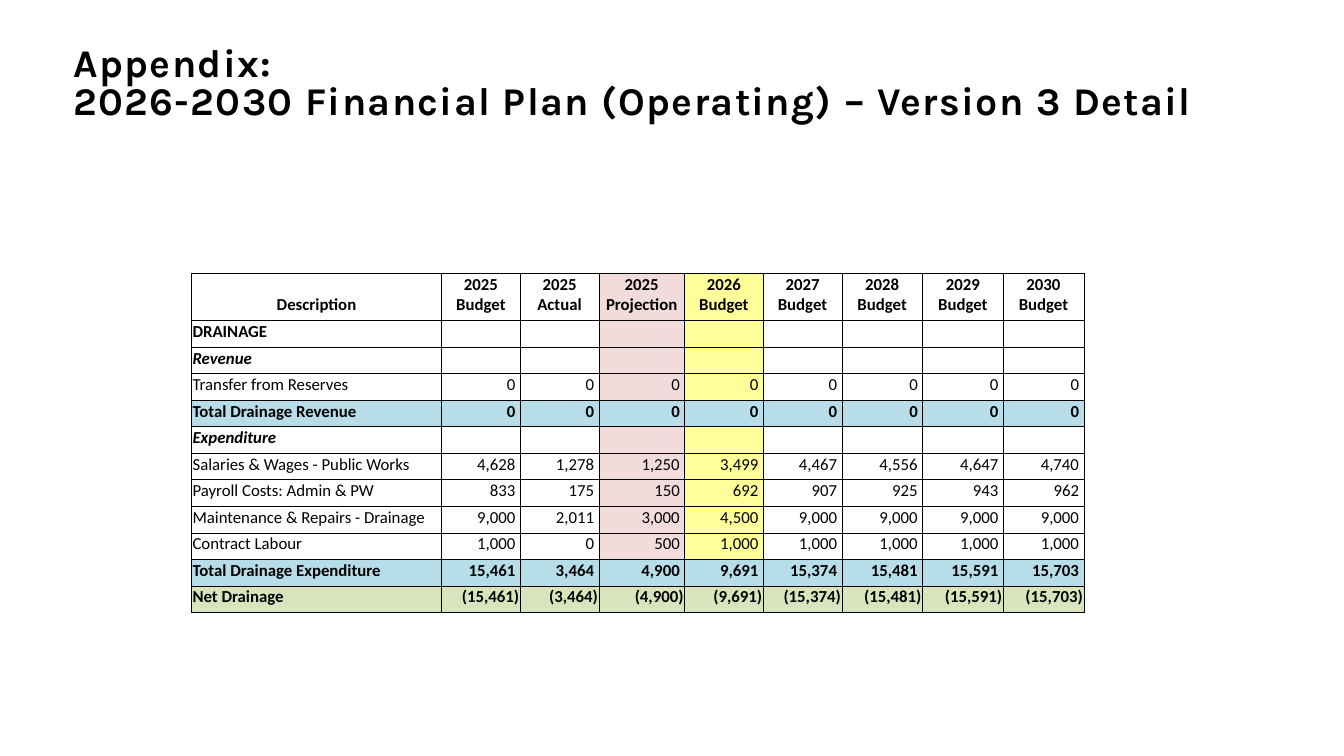
"""Build the drainage operating plan slide: a two-line title above a budget table."""
import lxml.etree
import pptx
import pptx.dml.color
import pptx.enum.text
import pptx.oxml.ns
import pptx.util

TITLE_LINES = ["Appendix:", "2026-2030 Financial Plan (Operating) – Version 3 Detail"]
HEADERS = ["Description", "2025 Budget", "2025 Actual", "2025 Projection", "2026 Budget",
           "2027 Budget", "2028 Budget", "2029 Budget", "2030 Budget"]
ROWS = [
    ("section", "DRAINAGE", []),
    ("group", "Revenue", []),
    ("item", "Transfer from Reserves", [0] * 8),
    ("total", "Total Drainage Revenue", [0] * 8),
    ("group", "Expenditure", []),
    ("item", "Salaries & Wages - Public Works", [4628, 1278, 1250, 3499, 4467, 4556, 4647, 4740]),
    ("item", "Payroll Costs: Admin & PW", [833, 175, 150, 692, 907, 925, 943, 962]),
    ("item", "Maintenance & Repairs - Drainage", [9000, 2011, 3000, 4500, 9000, 9000, 9000, 9000]),
    ("item", "Contract Labour", [1000, 0, 500, 1000, 1000, 1000, 1000, 1000]),
    ("total", "Total Drainage Expenditure",
     [15461, 3464, 4900, 9691, 15374, 15481, 15591, 15703]),
    ("net", "Net Drainage", [-15461, -3464, -4900, -9691, -15374, -15481, -15591, -15703]),
]
COLORS = {"text": "000000", "projection": "F2DCDB", "current": "FFFF99",
          "total": "B7DEE8", "net": "D8E4BC"}
COLUMN_FILLS = {3: "projection", 4: "current"}
COLUMN_WIDTHS = [2.48, 0.78, 0.78, 0.85, 0.78, 0.78, 0.8, 0.8, 0.8]
HEADER_HEIGHT, ROW_HEIGHT = 0.47, 0.26
TABLE_LEFT, TABLE_TOP = 1.9, 2.71
TITLE_BOX = (0.73, -0.12, 11.57, 1.34)
THIN, THICK = 0.5, 1
ALIGN = pptx.enum.text.PP_ALIGN
INCHES = pptx.util.Inches


def color(name):
    return pptx.dml.color.RGBColor.from_string(COLORS[name])


def add_run(paragraph, text, font_name, size, bold, italic=False):
    run = paragraph.add_run()
    run.text = text
    run.font.name = font_name
    run.font.size = pptx.util.Pt(size)
    run.font.bold = bold
    run.font.italic = italic
    run.font.color.rgb = color("text")
    return run


def add_element(parent, tag, **attributes):
    return lxml.etree.SubElement(parent, pptx.oxml.ns.qn(tag), **attributes)


def add_title(slide):
    title = slide.shapes.title
    title.left, title.top, title.width, title.height = map(INCHES, TITLE_BOX)
    frame = title.text_frame
    frame.word_wrap = True
    frame.auto_size = pptx.enum.text.MSO_AUTO_SIZE.NONE
    frame.vertical_anchor = pptx.enum.text.MSO_ANCHOR.BOTTOM
    frame.margin_left = frame.margin_top = frame.margin_right = frame.margin_bottom = 0
    paragraph = frame.paragraphs[0]
    paragraph.alignment = ALIGN.LEFT
    paragraph.line_spacing = 0.8
    for index, line in enumerate(TITLE_LINES):
        if index:
            paragraph.add_line_break()
        run = add_run(paragraph, line, "Karla", 28, True)
        run.font._element.set("spc", "100")


def set_borders(cell, top, bottom):
    properties = cell._tc.get_or_add_tcPr()
    for side, points in (("L", THIN), ("R", THIN), ("T", top), ("B", bottom)):
        line = add_element(properties, "a:ln" + side, w=str(pptx.util.Pt(points)))
        fill = add_element(line, "a:solidFill")
        add_element(fill, "a:srgbClr", val=COLORS["text"])


def format_amount(amount):
    return f"({-amount:,})" if amount < 0 else f"{amount:,} "


def fill_cell(cell, text, kind, column, alignment):
    cell.margin_left = cell.margin_top = cell.margin_right = INCHES(0.01)
    cell.margin_bottom = INCHES(0.05)
    cell.vertical_anchor = pptx.enum.text.MSO_ANCHOR.BOTTOM
    fill_name = kind if kind in COLORS else COLUMN_FILLS.get(column)
    if fill_name:
        cell.fill.solid()
        cell.fill.fore_color.rgb = color(fill_name)
    else:
        cell.fill.background()
    paragraph = cell.text_frame.paragraphs[0]
    paragraph.alignment = alignment
    if text:
        add_run(paragraph, text, "Calibri", 12, kind != "item", kind == "group")
    else:
        add_element(paragraph._p, "a:endParaRPr", sz="1200")


def add_budget_table(slide):
    records = [("header", HEADERS)]
    for kind, label, amounts in ROWS:
        values = [format_amount(amount) for amount in amounts] or [""] * (len(HEADERS) - 1)
        records.append((kind, [label] + values))
    kinds = [kind for kind, texts in records] + ["end"]
    height = HEADER_HEIGHT + ROW_HEIGHT * len(ROWS)
    table = slide.shapes.add_table(
        len(records), len(HEADERS), INCHES(TABLE_LEFT), INCHES(TABLE_TOP),
        INCHES(sum(COLUMN_WIDTHS)), INCHES(height)).table
    table.first_row = table.horz_banding = False
    for column, width in zip(table.columns, COLUMN_WIDTHS):
        column.width = INCHES(width)
    for row, (kind, texts) in enumerate(records):
        table.rows[row].height = INCHES(ROW_HEIGHT if row else HEADER_HEIGHT)
        top = THICK if kind == "total" else THIN
        bottom = THICK if kinds[row + 1] == "total" else THIN
        for column, text in enumerate(texts):
            cell = table.cell(row, column)
            alignment = ALIGN.RIGHT if column else ALIGN.LEFT
            set_borders(cell, top, bottom)
            fill_cell(cell, text, kind, column, alignment if row else ALIGN.CENTER)


def main():
    presentation = pptx.Presentation()
    presentation.slide_width = INCHES(13.33)
    presentation.slide_height = INCHES(7.5)
    slide = presentation.slides.add_slide(presentation.slide_layouts[5])
    add_title(slide)
    add_budget_table(slide)
    presentation.save("out.pptx")


if __name__ == "__main__":
    main()
